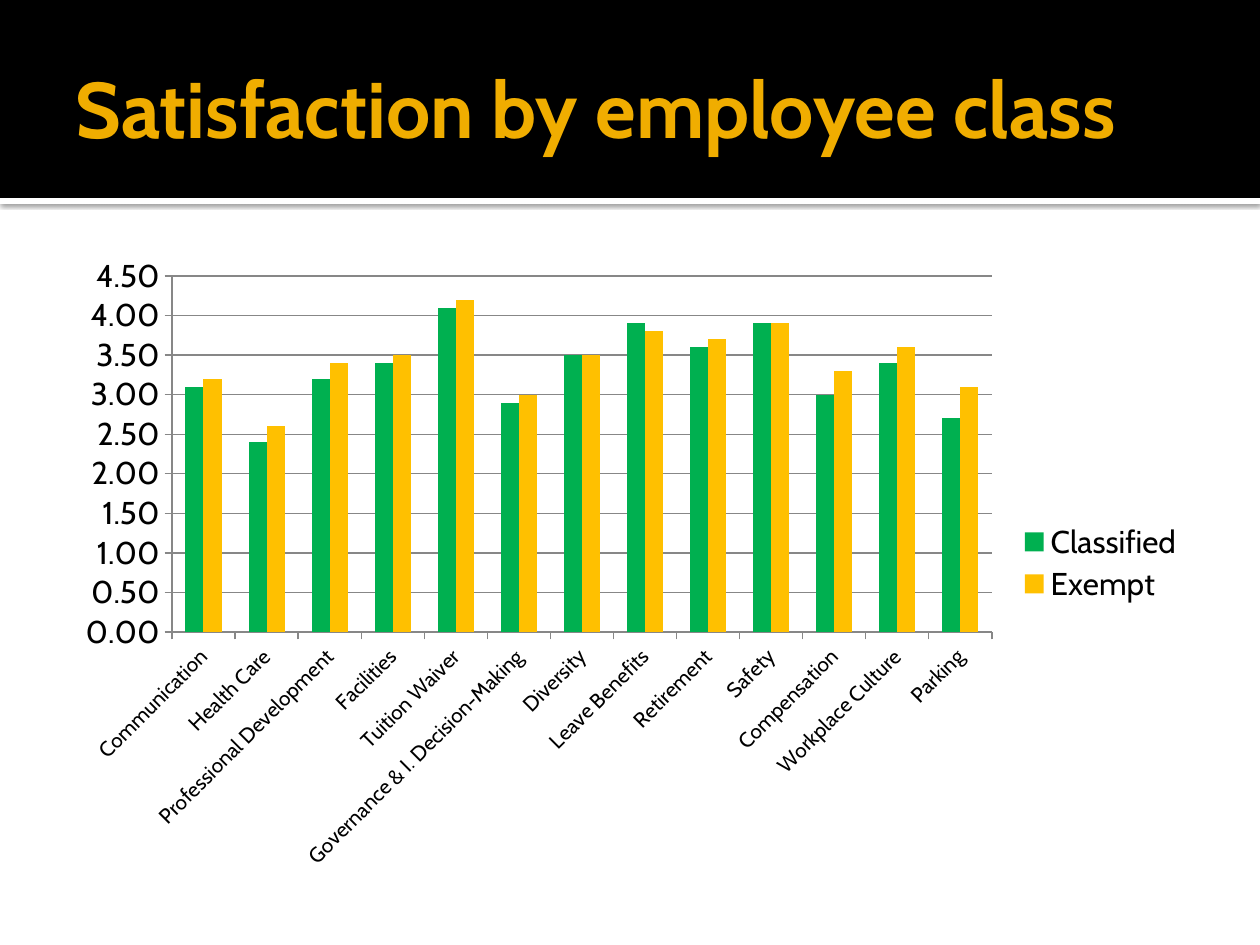
from dataclasses import dataclass
from lxml import etree
from pptx import Presentation
from pptx import util as u
from pptx.chart.data import CategoryChartData
from pptx.dml.color import RGBColor
from pptx.enum import chart as c, shapes, text
from pptx.oxml import parse_xml
from pptx.oxml.ns import nsdecls, qn


@dataclass(frozen=True)
class Theme:
    font: str = "Cabin"
    title_size: int = 45
    chart_size: int = 18
    category_size: int = 12
    title: str = "F0AD00"
    band: str = "000000"
    paper: str = "FFFFFF"
    ink: str = "000000"
    axis: str = "878787"
    classified: str = "00B050"
    exempt: str = "FFC000"


T = Theme()
PX_PER_INCH = 126
CHART_BOX = (63, 244, 1134, 638)
PLOT_BOX = (172, 276, 820, 356)
LEGEND_BOX = (1018, 519, 165, 88)
SATISFACTION = [
    ("Communication", 3.1, 3.2),
    ("Health Care", 2.4, 2.6),
    ("Professional Development", 3.2, 3.4),
    ("Facilities", 3.4, 3.5),
    ("Tuition Waiver", 4.1, 4.2),
    ("Governance & I. Decision-Making", 2.9, 3),
    ("Diversity", 3.5, 3.5),
    ("Leave Benefits", 3.9, 3.8),
    ("Retirement", 3.6, 3.7),
    ("Safety", 3.9, 3.9),
    ("Compensation", 3, 3.3),
    ("Workplace Culture", 3.4, 3.6),
    ("Parking", 2.7, 3.1),
]


def px(n):
    return u.Inches(n / PX_PER_INCH)


def rgb(color):
    return RGBColor.from_string(color)


def set_font(font, size, color=T.ink, bold=False):
    font.name, font.size, font.bold = T.font, u.Pt(size), bold
    font.color.rgb = rgb(color)


def add_band(s, box, color, shadow=False):
    sp = s.shapes.add_shape(shapes.MSO_SHAPE.RECTANGLE, *map(px, box))
    sp.fill.solid()
    sp.fill.fore_color.rgb = rgb(color)
    sp.line.fill.background()
    sp.shadow.inherit = False
    if shadow:
        effects = sp._element.spPr.find(qn("a:effectLst"))
        effects.append(parse_xml(
            f'<a:outerShdw {nsdecls("a")} blurRad="{u.Pt(2.5)}" dist="{u.Pt(0.8)}" '
            'dir="5400000" algn="tl" rotWithShape="0"><a:srgbClr val="000000">'
            '<a:alpha val="60000"/></a:srgbClr></a:outerShdw>'))


def set_title(s, label, box):
    sp = s.shapes.title
    s.shapes._spTree.append(sp._element)
    sp.left, sp.top, sp.width, sp.height = map(px, box)
    tf = sp.text_frame
    tf.word_wrap = True
    tf.auto_size = text.MSO_AUTO_SIZE.NONE
    tf.vertical_anchor = text.MSO_ANCHOR.MIDDLE
    tf.margin_left = u.Inches(0.1)
    tf.margin_right = tf.margin_top = tf.margin_bottom = u.Inches(0.05)
    p = tf.paragraphs[0]
    p.alignment = text.PP_ALIGN.LEFT
    r = p.add_run()
    r.text = label
    set_font(r.font, T.title_size, T.title, bold=True)


def place_in_chart(element, box, inner=False):
    for old in element.findall(qn("c:layout")):
        element.remove(old)
    left, top, width, height = CHART_BOX
    parts = {"x": (box[0] - left) / width, "y": (box[1] - top) / height,
             "w": box[2] / width, "h": box[3] / height}
    layout = etree.Element(qn("c:layout"))
    manual = etree.SubElement(layout, qn("c:manualLayout"))
    if inner:
        etree.SubElement(manual, qn("c:layoutTarget"), val="inner")
    for key in "xy":
        etree.SubElement(manual, qn(f"c:{key}Mode"), val="edge")
    for key, value in parts.items():
        etree.SubElement(manual, qn(f"c:{key}"), val=f"{value:.4f}")
    element.insert(0 if inner else 1, layout)


def style_axis(axis, size):
    set_font(axis.tick_labels.font, size)
    axis.major_tick_mark = c.XL_TICK_MARK.OUTSIDE
    axis.minor_tick_mark = c.XL_TICK_MARK.NONE
    axis.format.line.color.rgb = rgb(T.axis)
    axis.format.line.width = u.Pt(0.75)


def add_satisfaction_chart(s):
    names, classified, exempt = zip(*SATISFACTION)
    data = CategoryChartData(number_format="0.00")
    data.categories = names
    data.add_series("Classified", classified)
    data.add_series("Exempt", exempt)
    chart = s.shapes.add_chart(
        c.XL_CHART_TYPE.COLUMN_CLUSTERED, *map(px, CHART_BOX), data).chart
    chart.has_title = False
    set_font(chart.font, T.chart_size)

    plot = chart.plots[0]
    plot.vary_by_categories = False
    plot.gap_width, plot.overlap = 150, 0
    for series, color in zip(plot.series, (T.classified, T.exempt)):
        series.format.fill.solid()
        series.format.fill.fore_color.rgb = rgb(color)

    style_axis(chart.category_axis, T.category_size)
    body = chart.category_axis._element.find(qn("c:txPr")).find(qn("a:bodyPr"))
    body.set("rot", "-2700000")

    values = chart.value_axis
    style_axis(values, T.chart_size)
    values.minimum_scale, values.maximum_scale, values.major_unit = 0, 4.5, 0.5
    values.tick_labels.number_format = "0.00"
    values.tick_labels.number_format_is_linked = False
    values.has_major_gridlines = True
    values.major_gridlines.format.line.color.rgb = rgb(T.axis)
    values.major_gridlines.format.line.width = u.Pt(0.75)

    chart.has_legend = True
    chart.legend.position = c.XL_LEGEND_POSITION.RIGHT
    chart.legend.include_in_layout = False
    set_font(chart.legend.font, T.chart_size)
    place_in_chart(chart.legend._element, LEGEND_BOX)
    place_in_chart(chart._chartSpace.chart.plotArea, PLOT_BOX, inner=True)


def main():
    prs = Presentation()
    prs.slide_width, prs.slide_height = px(1260), px(945)
    s = prs.slides.add_slide(prs.slide_layouts[5])
    s.background.fill.solid()
    s.background.fill.fore_color.rgb = rgb(T.paper)
    add_band(s, (0, 198, 1260, 6), T.paper, shadow=True)
    add_band(s, (0, 0, 1260, 198), T.band)
    set_title(s, "Satisfaction by employee class", (63, 21, 1134, 173))
    add_satisfaction_chart(s)
    prs.save("out.pptx")


if __name__ == "__main__":
    main()
